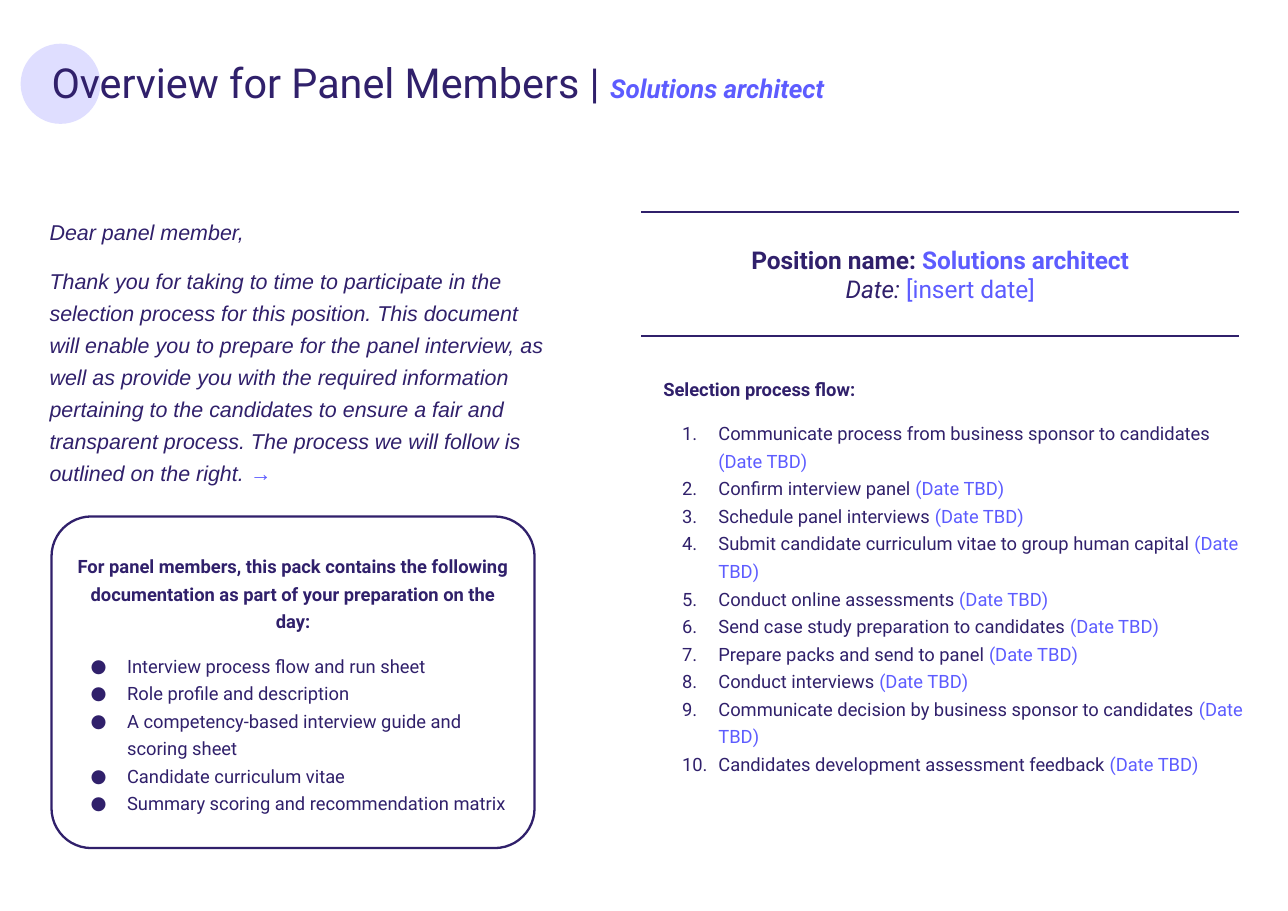
"""Build the overview slide for interview panel members."""
from lxml import etree
from pptx import Presentation
from pptx.dml.color import RGBColor
from pptx.enum.shapes import MSO_CONNECTOR, MSO_SHAPE
from pptx.enum.text import MSO_ANCHOR, MSO_AUTO_SIZE, PP_ALIGN
from pptx.oxml.ns import qn
from pptx.util import Inches, Pt

LINE = MSO_CONNECTOR.STRAIGHT
OVAL, ROUNDED = MSO_SHAPE.OVAL, MSO_SHAPE.ROUNDED_RECTANGLE
TOP, MIDDLE = MSO_ANCHOR.TOP, MSO_ANCHOR.MIDDLE
LEFT, CENTER = PP_ALIGN.LEFT, PP_ALIGN.CENTER

THEME = {
    "ink": "30206B", "accent": "5D5CFF", "halo": "DFDEFF", "paper": "FFFFFF",
    "head": "Roboto", "letter": "Arial",
    "title": 27, "role": 17, "position": 16, "intro": 14, "body": 12,
}
RGB = {k: RGBColor.from_string(THEME[k]) for k in ("ink", "accent", "halo", "paper")}

prs = Presentation()
prs.slide_width, prs.slide_height = Inches(11.69), Inches(8.27)
slide = prs.slides.add_slide(prs.slide_layouts[5])
shapes = slide.shapes


def area(x, y, w, h):
    """Turn percentages of the slide into left, top, width and height."""
    return [round(v * size / 100) for v, size in
            zip((x, y, w, h), (prs.slide_width, prs.slide_height) * 2)]


def write(tf, paragraphs, anchor=TOP, inset=0):
    """Fill a text frame with (runs, bullet, format) paragraphs."""
    frame = {"word_wrap": True, "auto_size": MSO_AUTO_SIZE.NONE, "vertical_anchor": anchor}
    frame |= {f"margin_{side}": inset for side in ("left", "top", "right", "bottom")}
    for name, value in frame.items():
        setattr(tf, name, value)
    for i, (runs, bullet, look) in enumerate(paragraphs):
        p = tf.add_paragraph() if i else tf.paragraphs[0]
        if bullet:
            pPr = p._p.get_or_add_pPr()
            pPr.set("marL", str(Inches(0.5)))
            pPr.set("indent", str(Inches(-0.33)))
            clr = etree.SubElement(pPr, qn("a:buClr"))
            etree.SubElement(clr, qn("a:srgbClr"), val=THEME["ink"])
            etree.SubElement(pPr, qn("a:buFont"), typeface=THEME["head"])
            tag, attrs = bullet
            etree.SubElement(pPr, qn(tag), attrs)
        for name, value in look.items():
            setattr(p, name, value)
        for text, size, color, style in runs:
            r = p.add_run()
            r.text = text
            r.font.color.rgb = RGB[color]
            font = {"name": THEME["head"], "size": Pt(THEME[size]), "bold": False, "italic": False}
            for name, value in (font | style).items():
                setattr(r.font, name, value)


BOLD, ITALIC = {"bold": True}, {"italic": True}
LETTER = ITALIC | {"name": THEME["letter"]}
NUMBER = ("a:buAutoNum", {"type": "arabicPeriod"})
DOT = ("a:buChar", {"char": "●"})
LOOSE = {"line_spacing": 1.25, "space_before": Pt(0), "space_after": Pt(0)}
AFTER_HEADING = LOOSE | {"space_before": Pt(11)}
INTRO = LOOSE | {"space_after": Pt(11)}

halo = shapes.add_shape(OVAL, *area(1.6, 4.8, 6.2, 8.8))
halo.shadow.inherit = False
halo.fill.solid()
halo.fill.fore_color.rgb = RGB["halo"]
halo.line.fill.background()

title = shapes.title
title.left, title.top, title.width, title.height = area(4, 6.9, 77.8, 10.2)
shapes.element.append(title.element)
write(title.text_frame, [(
    [("Overview for Panel Members | ", "title", "ink", {}),
     ("Solutions architect", "role", "accent", BOLD | ITALIC)],
    None, {"alignment": LEFT, "line_spacing": 0.9, "space_before": Pt(0)})])

position = shapes.add_textbox(*area(49.8, 23.2, 46.4, 13.8))
write(position.text_frame, [
    ([("Position name: ", "position", "ink", BOLD),
      ("Solutions architect", "position", "accent", BOLD)], None, {"alignment": CENTER}),
    ([("Date: ", "position", "ink", ITALIC),
      ("[insert date]", "position", "accent", {})], None, {"alignment": CENTER}),
], MIDDLE)

for row in (23.3, 36.9):
    x, y, w, h = area(49.8, row, 46.4, 0)
    rule = shapes.add_connector(LINE, x, y, x + w, y)
    rule.line.color.rgb = RGB["ink"]
    rule.line.width = Pt(1)
    etree.SubElement(rule.element.spPr, qn("a:effectLst"))

intro = shapes.add_textbox(*area(3.85, 23.3, 38.75, 30.2))
write(intro.text_frame, [
    ([("Dear panel member,", "intro", "ink", LETTER)], None, INTRO),
    ([("Thank you for taking to time to participate in the selection process for this "
       "position. This document will enable you to prepare for the panel interview, as well "
       "as provide you with the required information pertaining to the candidates to ensure "
       "a fair and transparent process. The process we will follow is outlined on the "
       "right. ", "intro", "ink", LETTER),
      ("→", "intro", "accent", BOLD | {"name": THEME["letter"]})], None, INTRO),
])

steps = [
    "Communicate process from business sponsor to candidates",
    "Confirm interview panel",
    "Schedule panel interviews",
    "Submit candidate curriculum vitae to group human capital",
    "Conduct online assessments",
    "Send case study preparation to candidates",
    "Prepare packs and send to panel",
    "Conduct interviews",
    "Communicate decision by business sponsor to candidates",
    "Candidates development assessment feedback",
]
flow = shapes.add_textbox(*area(51.5, 40.9, 45.5, 52.2))
write(flow.text_frame, [([("Selection process flow:", "body", "ink", BOLD)], None, LOOSE)] + [
    ([(f"{step} ", "body", "ink", {}), ("(Date TBD)", "body", "accent", {})],
     NUMBER, LOOSE if i else AFTER_HEADING) for i, step in enumerate(steps)])

documents = [
    "Interview process flow and run sheet",
    "Role profile and description",
    "A competency-based interview guide and scoring sheet",
    "Candidate curriculum vitae",
    "Summary scoring and recommendation matrix",
]
pack = shapes.add_shape(ROUNDED, *area(4, 56.7, 37.5, 36.4))
pack.shadow.inherit = False
pack.adjustments[0] = 0.12
pack.fill.solid()
pack.fill.fore_color.rgb = RGB["paper"]
pack.line.color.rgb = RGB["ink"]
pack.line.width = Pt(1.5)
write(pack.text_frame, [(
    [("For panel members, this pack contains the following documentation as part of your "
      "preparation on the day:", "body", "ink", BOLD)], None, LOOSE | {"alignment": CENTER})] + [
    ([(name, "body", "ink", {})], DOT, (LOOSE if i else AFTER_HEADING) | {"alignment": LEFT})
    for i, name in enumerate(documents)], MIDDLE, Inches(0.08))

prs.save("out.pptx")
